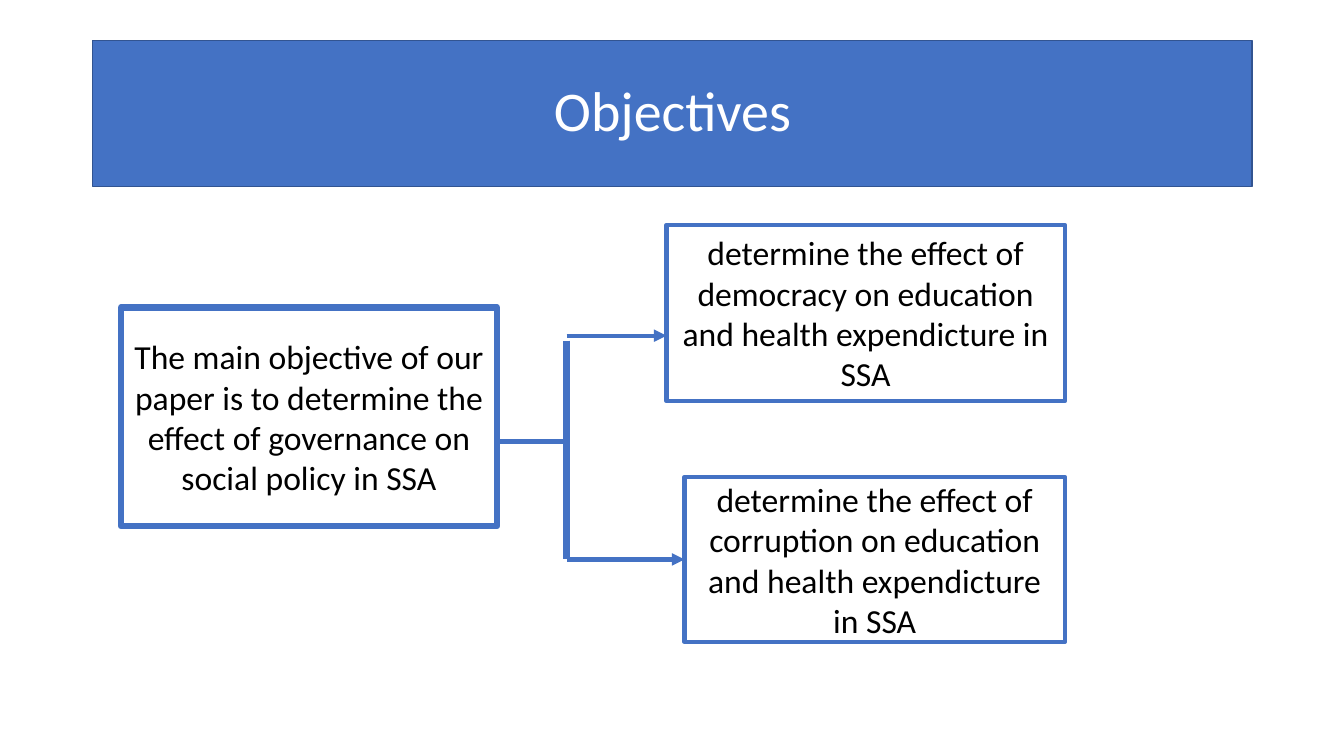
from lxml.etree import SubElement
from pptx import Presentation
from pptx.dml.color import RGBColor
from pptx.enum.shapes import MSO_CONNECTOR, MSO_SHAPE
from pptx.enum.text import MSO_ANCHOR, PP_ALIGN
from pptx.oxml.ns import qn
from pptx.util import Pt

PX = 9144  # 100 px to the inch
COLORS = {"blue": "4472C4", "edge": "325491", "white": "FFFFFF", "black": "000000"}
MAIN_GOAL = "The main objective of our paper is to determine the effect of governance on social policy in SSA"
GOAL = "determine the effect of {} on education and health expendicture in SSA"


def color(name):
    return RGBColor.from_string(COLORS[name])


def set_all(target, values):
    for name, value in values.items():
        setattr(target, name, value)


def add_box(page, box, text, fill="white", line="blue", weight=3, ink="black", size=24, spacing=1.0):
    shape = page.shapes.add_shape(MSO_SHAPE.RECTANGLE, *(n * PX for n in box))
    shape.shadow.inherit = False
    shape.fill.solid()
    shape.fill.fore_color.rgb = color(fill)
    shape.line.color.rgb = color(line)
    shape.line.width = Pt(weight)
    set_all(shape.text_frame, {"word_wrap": True, "vertical_anchor": MSO_ANCHOR.MIDDLE})
    para = shape.text_frame.paragraphs[0]
    set_all(para, {"alignment": PP_ALIGN.CENTER, "line_spacing": spacing})
    span = para.add_run()
    span.text = text
    set_all(span.font, {"name": "Calibri", "size": Pt(size)})
    span.font.color.rgb = color(ink)


def add_line(page, start, end, weight=3, arrow=False):
    line = page.shapes.add_connector(MSO_CONNECTOR.STRAIGHT, *(n * PX for n in start + end))
    line.line.color.rgb = color("blue")
    line.line.width = Pt(weight)
    if arrow:
        SubElement(line.line._get_or_add_ln(), qn("a:tailEnd"), type="triangle")
    SubElement(line._element.spPr, qn("a:effectLst"))


def add_title(page, box):
    add_box(page, box, "Objectives", fill="blue", line="edge", weight=1, ink="white", size=40, spacing=0.9)


def add_objective_tree(page, box):
    """Main objective on the left, branching into two specific ones on the right."""
    left, top, width, height = box
    right = left + width
    fork = left + 442
    main = (left, top + 82, 373, 217)
    democracy = (right - 395, top, 395, 175)
    corruption = (right - 377, top + height - 164, 377, 164)
    upper, middle, lower = top + 110, top + 215, top + 332

    add_box(page, main, MAIN_GOAL, weight=4.5)
    add_box(page, democracy, GOAL.format("democracy"))
    add_box(page, corruption, GOAL.format("corruption"))

    add_line(page, (left + main[2], middle), (fork, middle))
    add_line(page, (fork, upper + 5), (fork, lower), weight=4.5)
    for target, level in ((democracy, upper), (corruption, lower)):
        add_line(page, (fork, level), (target[0], level), arrow=True)


def main():
    deck = Presentation()
    set_all(deck, {"slide_width": 1333 * PX, "slide_height": 750 * PX})
    page = deck.slides.add_slide(deck.slide_layouts[6])
    add_objective_tree(page, (120, 223, 936, 414))
    add_title(page, (92, 40, 1150, 145))
    deck.save("out.pptx")


if __name__ == "__main__":
    main()
